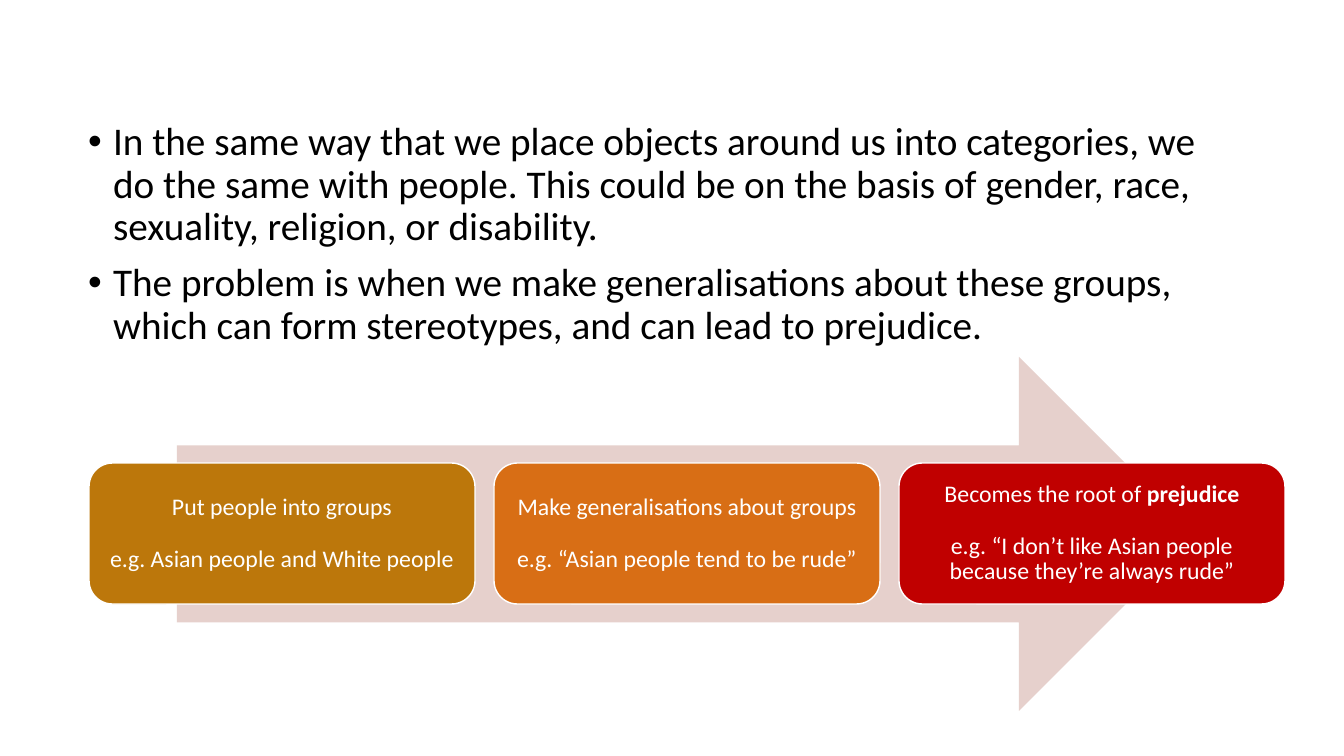
"""Build a slide showing how grouping people can lead to prejudice."""
from lxml import etree
from pptx import Presentation
from pptx.dml.color import RGBColor
from pptx.enum.shapes import MSO_SHAPE
from pptx.enum.text import MSO_ANCHOR, MSO_AUTO_SIZE, PP_ALIGN
from pptx.oxml.ns import qn
from pptx.util import Emu, Pt

RIGHT_ARROW = MSO_SHAPE.RIGHT_ARROW
ROUNDED_RECTANGLE = MSO_SHAPE.ROUNDED_RECTANGLE
MIDDLE = MSO_ANCHOR.MIDDLE
NO_AUTOFIT = MSO_AUTO_SIZE.NONE
LEFT, CENTER = PP_ALIGN.LEFT, PP_ALIGN.CENTER

BLACK = RGBColor(0x00, 0x00, 0x00)
WHITE = RGBColor(0xFF, 0xFF, 0xFF)
PALE_ROSE = RGBColor(0xE6, 0xD0, 0xCC)
GOLD = RGBColor(0xBC, 0x77, 0x0B)
ORANGE = RGBColor(0xD8, 0x6E, 0x15)
RED = RGBColor(0xC0, 0x00, 0x00)

EMU_PER_PX = 914400 / 100.8
CONTENT_LAYOUT = 1

POINTS = [
    "In the same way that we place objects around us into categories, we do the same "
    "with people. This could be on the basis of gender, race, sexuality, religion, or disability.",
    "The problem is when we make generalisations about these groups, which can form "
    "stereotypes, and can lead to prejudice.",
]
STEPS = [
    (GOLD, [("Put people into groups", False)], "e.g. Asian people and White people"),
    (ORANGE, [("Make generalisations about groups", False)], "e.g. “Asian people tend to be rude”"),
    (RED, [("Becomes the root of ", False), ("prejudice", True)],
     "e.g. “I don’t like Asian people because they’re always rude”"),
]
STEP_LEFT, STEP_TOP, STEP_WIDTH, STEP_HEIGHT, STEP_PITCH = 89, 463, 386, 141, 405
STEP_INSET = 7


def px(length):
    """Turn a length in px into EMU."""
    return Emu(round(length * EMU_PER_PX))


def write_paragraph(paragraph, runs, *, font, size, color, align=LEFT, before=0):
    """Fill a paragraph with (text, bold) runs in one format."""
    paragraph.alignment = align
    paragraph.line_spacing = 0.9
    paragraph.space_before = Pt(before)
    paragraph.space_after = Pt(0)
    for text, bold in runs:
        run = paragraph.add_run()
        run.text = text
        run.font.name = font
        run.font.size = Pt(size)
        run.font.bold = bold
        run.font.color.rgb = color


class SlideBuilder:
    """Hold the style and the current slide."""

    def __init__(self, slide, font):
        self.slide = slide
        self.font = font

    def remove_title(self):
        """Remove the unused title placeholder."""
        title = self.slide.shapes.title.element
        title.getparent().remove(title)

    def bullets(self, left, top, width, height, points):
        """Place the body placeholder and fill it with bullet points."""
        body = self.slide.placeholders[1]
        body.left, body.top, body.width, body.height = map(px, (left, top, width, height))
        frame = body.text_frame
        frame.auto_size = NO_AUTOFIT
        for index, point in enumerate(points):
            paragraph = frame.paragraphs[0] if index == 0 else frame.add_paragraph()
            write_paragraph(paragraph, [(point, False)], font=self.font, size=28,
                            color=BLACK, before=10)
            properties = paragraph._p.get_or_add_pPr()
            properties.set("marL", str(px(25)))
            properties.set("indent", str(-px(25)))
            etree.SubElement(properties, qn("a:buFont")).set("typeface", "Arial")
            etree.SubElement(properties, qn("a:buChar")).set("char", "•")

    def shape(self, kind, left, top, width, height, fill, line=None):
        """Add a flat preset shape."""
        shape = self.slide.shapes.add_shape(kind, *map(px, (left, top, width, height)))
        shape.shadow.inherit = False
        shape.fill.solid()
        shape.fill.fore_color.rgb = fill
        if line is None:
            shape.line.fill.background()
        else:
            shape.line.color.rgb = line
            shape.line.width = Pt(1)
        return shape

    def step(self, left, fill, heading, example):
        """Add a rounded box with a heading and an example."""
        box = self.shape(ROUNDED_RECTANGLE, left, STEP_TOP, STEP_WIDTH, STEP_HEIGHT, fill, WHITE)
        frame = box.text_frame
        frame.word_wrap = True
        frame.vertical_anchor = MIDDLE
        frame.margin_left = frame.margin_right = px(STEP_INSET)
        frame.margin_top = frame.margin_bottom = px(STEP_INSET)
        style = {"font": self.font, "size": 17, "color": WHITE, "align": CENTER}
        write_paragraph(frame.paragraphs[0], heading, **style)
        write_paragraph(frame.add_paragraph(), [(example, False)], before=18.5, **style)


def main():
    """Build and save the presentation."""
    presentation = Presentation()
    presentation.slide_width, presentation.slide_height = px(1344), px(756)
    slide = presentation.slides.add_slide(presentation.slide_layouts[CONTENT_LAYOUT])
    builder = SlideBuilder(slide, "Calibri")
    builder.remove_title()
    builder.bullets(78, 117, 1159, 480, POINTS)
    builder.shape(RIGHT_ARROW, 177, 357, 1019, 354, PALE_ROSE)
    for index, (fill, heading, example) in enumerate(STEPS):
        builder.step(STEP_LEFT + index * STEP_PITCH, fill, heading, example)
    presentation.save("out.pptx")


if __name__ == "__main__":
    main()
